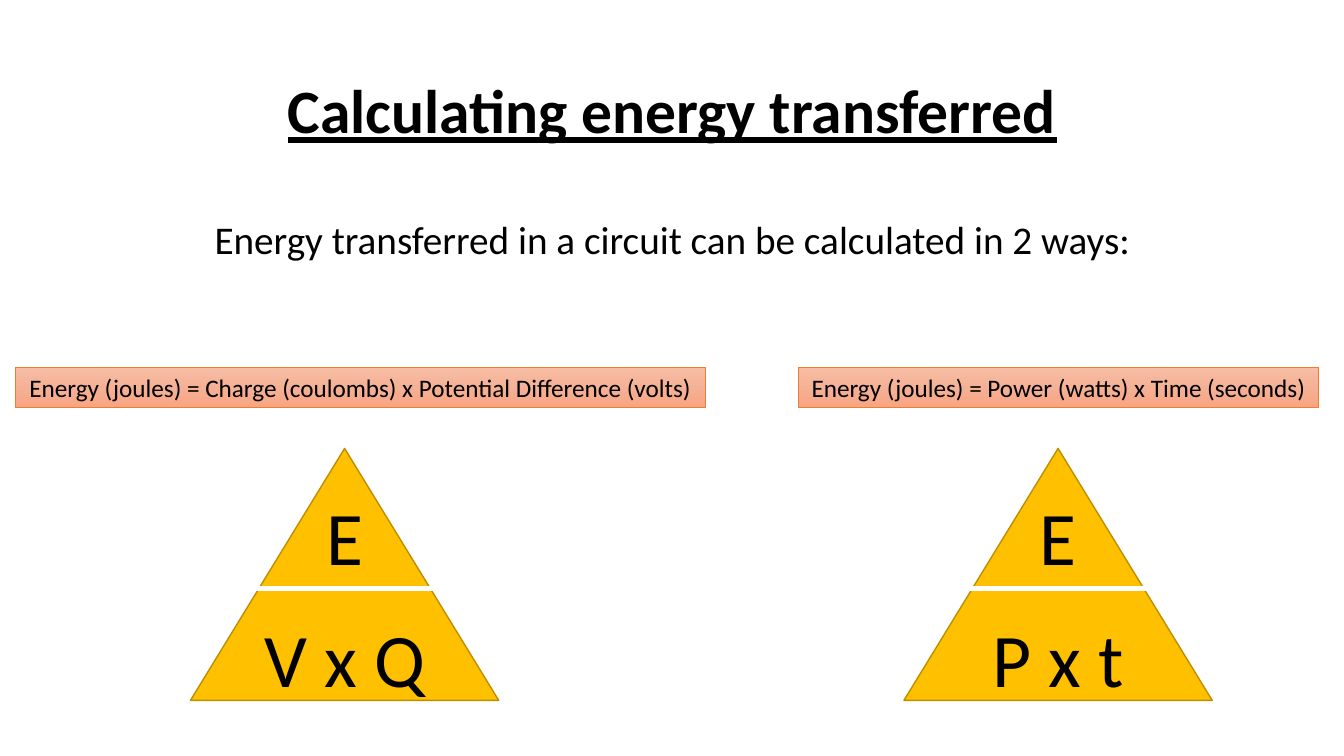
import copy

import pptx
import pptx.dml.color
import pptx.enum.shapes
import pptx.enum.text
import pptx.oxml
import pptx.oxml.ns
import pptx.util

Cm = pptx.util.Cm
Pt = pptx.util.Pt
SHAPE = pptx.enum.shapes.MSO_SHAPE
ANCHOR = pptx.enum.text.MSO_ANCHOR

TITLE = "Calculating energy transferred"
INTRO = "Energy transferred in a circuit can be calculated in 2 ways:"
METHODS = [
    {
        "formula": "Energy (joules) = Charge (coulombs) x Potential Difference (volts)",
        "formula_left": 0.38,
        "formula_width": 17.4,
        "triangle_left": 4.8,
        "product": "V x Q",
        "product_width": 4.6,
    },
    {
        "formula": "Energy (joules) = Power (watts) x Time (seconds)",
        "formula_left": 20.12,
        "formula_width": 13.11,
        "triangle_left": 22.78,
        "product": "P x t",
        "product_width": 3.86,
    },
]
RESULT, RESULT_WIDTH = "E", 1.45
COLOURS = {
    "text": "000000",
    "formula_top": "F7BDA5",
    "formula_middle": "F5B196",
    "formula_bottom": "F8A582",
    "formula_line": "ED7D31",
    "triangle": "FFC000",
    "triangle_line": "BD8E00",
    "divider": "FFFFFF",
}
FORMULA_TOP, FORMULA_HEIGHT = 9.25, 1.02
TRIANGLE_TOP, TRIANGLE_WIDTH, TRIANGLE_HEIGHT = 11.3, 7.77, 6.35
DIVIDER_TOP, RESULT_TOP, PRODUCT_TOP, LETTER_HEIGHT = 14.83, 12.22, 15.29, 2.56


def colour(name):
    return pptx.dml.color.RGBColor.from_string(COLOURS[name])


def box(left, top, width, height):
    return [Cm(length) for length in (left, top, width, height)]


def write(holder, text, size, bold=False, underline=False, wrap=False,
          anchor=ANCHOR.TOP, spacing=None, before=0):
    frame = holder.text_frame
    frame.word_wrap = wrap
    frame.vertical_anchor = anchor
    paragraph = frame.paragraphs[0]
    paragraph.alignment = pptx.enum.text.PP_ALIGN.CENTER
    paragraph.line_spacing = spacing
    paragraph.space_before = Pt(before)
    run = paragraph.add_run()
    run.text = text
    run.font.name = "Calibri"
    run.font.size = Pt(size)
    run.font.bold = bold
    run.font.underline = underline
    run.font.color.rgb = colour("text")


def add_formula(shapes, method):
    formula = shapes.add_shape(SHAPE.RECTANGLE, *box(
        method["formula_left"], FORMULA_TOP, method["formula_width"], FORMULA_HEIGHT))
    formula.shadow.inherit = False
    formula.fill.gradient()
    formula.fill.gradient_angle = 270
    stops = next(formula._element.spPr.iter(pptx.oxml.ns.qn("a:gsLst")))
    stops.insert(1, copy.deepcopy(stops[0]))
    shades = ("formula_top", "formula_middle", "formula_bottom")
    for index, (stop, shade) in enumerate(zip(formula.fill.gradient_stops, shades)):
        stop.position = index / 2
        stop.color.rgb = colour(shade)
    formula.line.color.rgb = colour("formula_line")
    formula.line.width = Pt(0.5)
    write(formula, method["formula"], 18)


def add_triangle(shapes, method):
    group = shapes.add_group_shape().shapes
    left = method["triangle_left"]
    triangle = group.add_shape(SHAPE.ISOSCELES_TRIANGLE, *box(
        left, TRIANGLE_TOP, TRIANGLE_WIDTH, TRIANGLE_HEIGHT))
    triangle.shadow.inherit = False
    triangle.fill.solid()
    triangle.fill.fore_color.rgb = colour("triangle")
    triangle.line.color.rgb = colour("triangle_line")
    triangle.line.width = Pt(1)

    divider = group.add_connector(
        pptx.enum.shapes.MSO_CONNECTOR.STRAIGHT,
        Cm(left), Cm(DIVIDER_TOP), Cm(left + TRIANGLE_WIDTH), Cm(DIVIDER_TOP))
    divider.line.color.rgb = colour("divider")
    divider.line.width = Pt(4)
    divider._element.spPr.append(pptx.oxml.parse_xml(
        "<a:effectLst %s/>" % pptx.oxml.ns.nsdecls("a")))

    letters = [(method["product"], method["product_width"], PRODUCT_TOP),
               (RESULT, RESULT_WIDTH, RESULT_TOP)]
    for text, width, top in letters:
        letter_left = left + (TRIANGLE_WIDTH - width) / 2
        write(group.add_textbox(*box(letter_left, top, width, LETTER_HEIGHT)), text, 54)


def main():
    """Build the slide on the two ways to calculate energy transferred."""
    deck = pptx.Presentation()
    deck.slide_width, deck.slide_height = Cm(33.87), Cm(19.05)
    shapes = deck.slides.add_slide(deck.slide_layouts[6]).shapes
    write(shapes.add_textbox(*box(2.34, 1.02, 29.21, 3.68)), TITLE, 44, bold=True,
          underline=True, wrap=True, anchor=ANCHOR.MIDDLE, spacing=0.9)
    write(shapes.add_textbox(*box(1.7, 5.44, 30.48, 11.46)), INTRO, 28,
          wrap=True, spacing=0.9, before=10)
    for method in METHODS:
        add_formula(shapes, method)
    for method in METHODS:
        add_triangle(shapes, method)
    deck.save("out.pptx")


if __name__ == "__main__":
    main()
